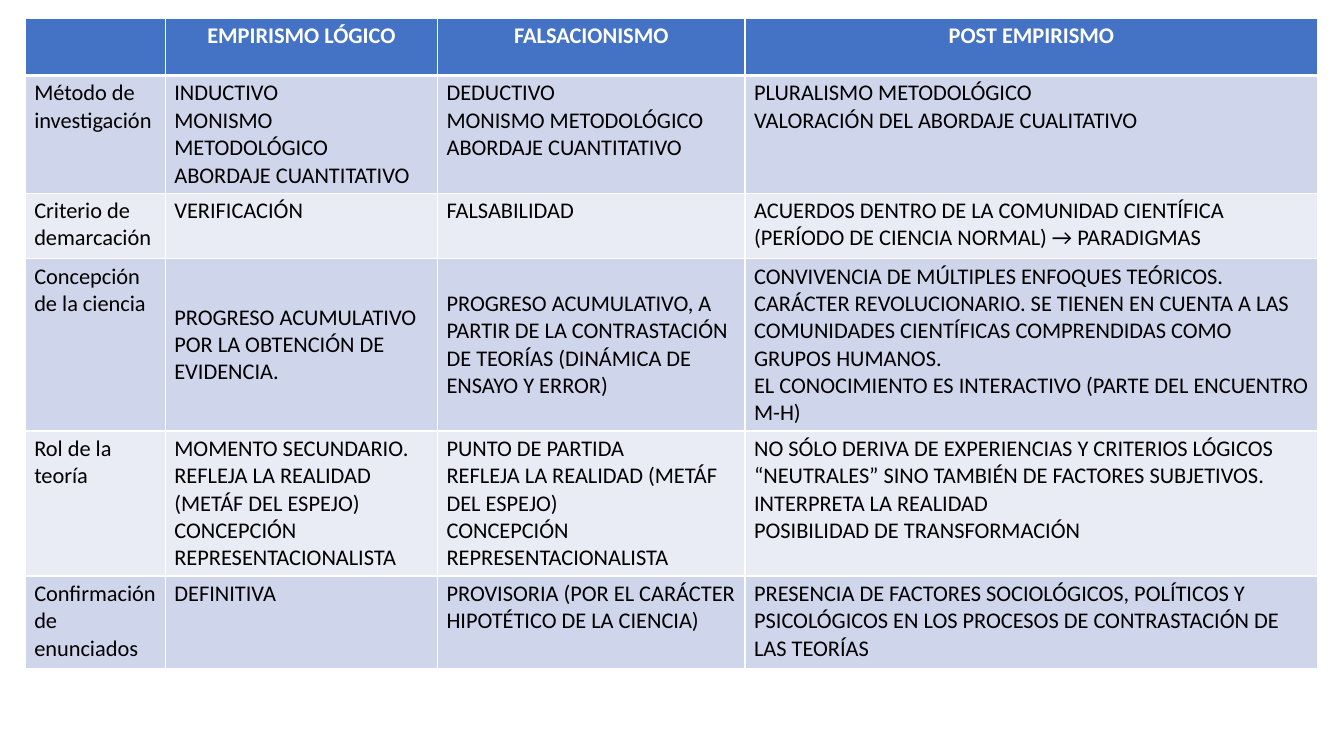
from dataclasses import dataclass

from lxml import etree
from pptx import Presentation
from pptx.dml.color import RGBColor
from pptx.enum.text import MSO_ANCHOR, PP_ALIGN
from pptx.oxml.ns import qn
from pptx.util import Inches, Pt

CENTER, LEFT = PP_ALIGN.CENTER, PP_ALIGN.LEFT
TOP, MIDDLE = MSO_ANCHOR.TOP, MSO_ANCHOR.MIDDLE
BLANK_LAYOUT = 6


@dataclass(frozen=True)
class Theme:
    font: str = "Calibri"
    size: float = 16
    header_fill: str = "4472C4"
    header_text: str = "FFFFFF"
    body_text: str = "000000"
    bands: tuple = ("CFD5EA", "E9EBF5")
    border: str = "FFFFFF"
    thin: float = 1
    thick: float = 3
    side_margin: float = 0.09
    end_margin: float = 0.04


THEME = Theme()

TABLE_BOX = (0.25, 0.18, 12.82, 6.43)
COLUMN_WIDTHS = (1.39, 2.7, 3.05, 5.68)
ROW_HEIGHTS = (0.57, 1.16, 0.65, 1.7, 1.43, 0.92)
CENTERED_ROW = 3  # its answers sit in the middle of the row's height

# One line of a cell becomes one paragraph
COMPARISON = (
    ("", "EMPIRISMO LÓGICO", "FALSACIONISMO", "POST EMPIRISMO"),
    ("Método de investigación",
     "INDUCTIVO\nMONISMO METODOLÓGICO\nABORDAJE CUANTITATIVO",
     "DEDUCTIVO\nMONISMO METODOLÓGICO\nABORDAJE CUANTITATIVO",
     "PLURALISMO METODOLÓGICO\nVALORACIÓN DEL ABORDAJE CUALITATIVO"),
    ("Criterio de demarcación",
     "VERIFICACIÓN",
     "FALSABILIDAD",
     "ACUERDOS DENTRO DE LA COMUNIDAD CIENTÍFICA "
     "(PERÍODO DE CIENCIA NORMAL) → PARADIGMAS"),
    ("Concepción de la ciencia",
     "PROGRESO ACUMULATIVO POR LA OBTENCIÓN DE EVIDENCIA.",
     "PROGRESO ACUMULATIVO, A PARTIR DE LA CONTRASTACIÓN DE TEORÍAS "
     "(DINÁMICA DE ENSAYO Y ERROR)",
     "CONVIVENCIA DE MÚLTIPLES ENFOQUES TEÓRICOS.\n"
     "CARÁCTER REVOLUCIONARIO. SE TIENEN EN CUENTA A LAS COMUNIDADES "
     "CIENTÍFICAS COMPRENDIDAS COMO GRUPOS HUMANOS.\n"
     "EL CONOCIMIENTO ES INTERACTIVO (PARTE DEL ENCUENTRO M-H)"),
    ("Rol de la teoría",
     "MOMENTO SECUNDARIO.\nREFLEJA LA REALIDAD (METÁF DEL ESPEJO)\n"
     "CONCEPCIÓN REPRESENTACIONALISTA",
     "PUNTO DE PARTIDA\nREFLEJA LA REALIDAD (METÁF DEL ESPEJO)\n"
     "CONCEPCIÓN REPRESENTACIONALISTA",
     "NO SÓLO DERIVA DE EXPERIENCIAS Y CRITERIOS LÓGICOS “NEUTRALES” "
     "SINO TAMBIÉN DE FACTORES SUBJETIVOS.\n"
     "INTERPRETA LA REALIDAD\nPOSIBILIDAD DE TRANSFORMACIÓN"),
    ("Confirmación de enunciados",
     "DEFINITIVA",
     "PROVISORIA (POR EL CARÁCTER HIPOTÉTICO DE LA CIENCIA)",
     "PRESENCIA DE FACTORES SOCIOLÓGICOS, POLÍTICOS Y PSICOLÓGICOS "
     "EN LOS PROCESOS DE CONTRASTACIÓN DE LAS TEORÍAS"),
)


def set_borders(cell, top, bottom):
    """Draw the four cell borders; they must precede the fill in the XML."""
    properties = cell._tc.get_or_add_tcPr()
    widths = {"lnL": THEME.thin, "lnR": THEME.thin, "lnT": top, "lnB": bottom}
    for position, (side, width) in enumerate(widths.items()):
        line = etree.Element(qn(f"a:{side}"), w=str(Pt(width)))
        fill = etree.SubElement(line, qn("a:solidFill"))
        etree.SubElement(fill, qn("a:srgbClr"), val=THEME.border)
        properties.insert(position, line)


def style_cell(cell, text, row, column):
    is_header = row == 0
    # Fill, borders and margins
    fill = THEME.header_fill if is_header else THEME.bands[(row - 1) % 2]
    cell.fill.solid()
    cell.fill.fore_color.rgb = RGBColor.from_string(fill)
    set_borders(cell,
                top=THEME.thick if row == 1 else THEME.thin,
                bottom=THEME.thick if is_header else THEME.thin)
    cell.margin_left = cell.margin_right = Inches(THEME.side_margin)
    cell.margin_top = cell.margin_bottom = Inches(THEME.end_margin)
    cell.vertical_anchor = MIDDLE if row == CENTERED_ROW and column else TOP
    # Text
    cell.text = text
    color = THEME.header_text if is_header else THEME.body_text
    for paragraph in cell.text_frame.paragraphs:
        paragraph.alignment = CENTER if is_header else LEFT
        paragraph.font.name = THEME.font
        paragraph.font.size = Pt(THEME.size)
        paragraph.font.bold = is_header
        paragraph.font.color.rgb = RGBColor.from_string(color)


def add_comparison_table(slide, box):
    """Fill the box with the table, sharing it out by the grid's proportions."""
    left, top, width, height = box
    table = slide.shapes.add_table(
        len(ROW_HEIGHTS), len(COLUMN_WIDTHS),
        Inches(left), Inches(top), Inches(width), Inches(height)).table
    for column, share in zip(table.columns, COLUMN_WIDTHS):
        column.width = Inches(width * share / sum(COLUMN_WIDTHS))
    for row, share in zip(table.rows, ROW_HEIGHTS):
        row.height = Inches(height * share / sum(ROW_HEIGHTS))
    for row, texts in enumerate(COMPARISON):
        for column, text in enumerate(texts):
            style_cell(table.cell(row, column), text, row, column)


def main():
    presentation = Presentation()
    presentation.slide_width = Inches(13.33)
    presentation.slide_height = Inches(7.5)
    slide = presentation.slides.add_slide(presentation.slide_layouts[BLANK_LAYOUT])
    add_comparison_table(slide, TABLE_BOX)
    presentation.save("out.pptx")


if __name__ == "__main__":
    main()
